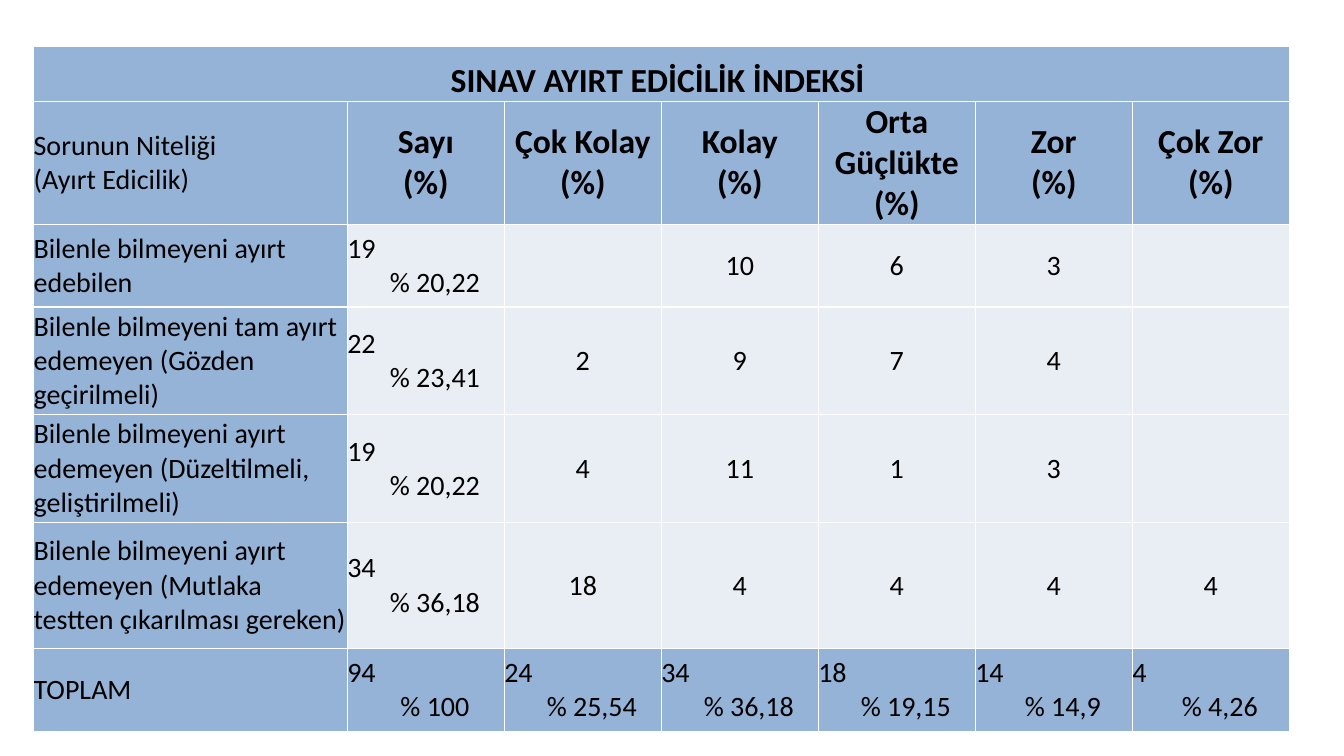
from lxml import etree
from pptx import Presentation
from pptx.dml.color import RGBColor
from pptx.enum.text import MSO_ANCHOR as Anchor, PP_ALIGN as Align
from pptx.oxml import parse_xml
from pptx.util import Pt

HEADER_BLUE, BODY_GREY, BLACK = "95B3D7", "E9EDF4", "000000"
COLUMN_WIDTHS = [224.1] + [112.15] * 6
ROW_HEIGHTS = [38.9, 88, 59, 77, 77, 90, 59]
BORDER = """<a:{side} xmlns:a="http://schemas.openxmlformats.org/drawingml/2006/main"
 w="12700"><a:solidFill><a:srgbClr val="FFFFFF"/></a:solidFill></a:{side}>"""

# A tuple holds a count and the percentage below it.
ROWS = [
    ["SINAV AYIRT EDİCİLİK İNDEKSİ "] + [""] * 6,
    ["Sorunun Niteliği \n(Ayırt Edicilik)", "Sayı\n(%)", "Çok Kolay\n(%)", "Kolay\n(%)",
     "Orta Güçlükte\n(%)", "Zor\n(%)", "Çok Zor\n(%)"],
    ["Bilenle bilmeyeni ayırt \nedebilen", ("19", "% 20,22"), "", "10", "6", "3", ""],
    ["Bilenle bilmeyeni tam ayırt edemeyen (Gözden geçirilmeli)",
     ("22", "% 23,41"), "2", "9", "7", "4", ""],
    ["Bilenle bilmeyeni ayırt edemeyen (Düzeltilmeli, geliştirilmeli)",
     ("19", "% 20,22"), "4", "11", "1", "3", ""],
    ["Bilenle bilmeyeni ayırt edemeyen (Mutlaka testten çıkarılması gereken)",
     ("34", "% 36,18"), "18", "4", "4", "4", "4"],
    ["TOPLAM", ("94", "% 100"), ("24", "% 25,54"), ("34", "% 36,18"),
     ("18", "% 19,15"), ("14", "% 14,9"), ("4", "% 4,26")],
]


def color(hex_string):
    return RGBColor.from_string(hex_string)


def write(paragraph, text, size=20, bold=False, align=Align.CENTER, indent=0):
    paragraph.text = text
    paragraph.alignment = align
    if indent:
        paragraph._p.get_or_add_pPr().set("marL", str(Pt(indent)))
    for run in paragraph.runs:
        run.font.name = "Calibri"
        run.font.size = Pt(size)
        run.font.bold = bold
        run.font.color.rgb = color(BLACK)


presentation = Presentation()
presentation.slide_width, presentation.slide_height = Pt(960), Pt(540)
slide = presentation.slides.add_slide(presentation.slide_layouts[6])

table = slide.shapes.add_table(
    len(ROWS), len(COLUMN_WIDTHS), Pt(24), Pt(33.4),
    Pt(sum(COLUMN_WIDTHS)), Pt(sum(ROW_HEIGHTS))).table
for column, width in zip(table.columns, COLUMN_WIDTHS):
    column.width = Pt(width)
for row, height in zip(table.rows, ROW_HEIGHTS):
    row.height = Pt(height)
table.cell(0, 0).merge(table.cell(0, len(COLUMN_WIDTHS) - 1))

last_row = len(ROWS) - 1
for row_index, row_values in enumerate(ROWS):
    for column_index, value in enumerate(row_values):
        cell = table.cell(row_index, column_index)
        is_header = row_index in (0, 1, last_row) or column_index == 0
        cell.fill.solid()
        cell.fill.fore_color.rgb = color(HEADER_BLUE if is_header else BODY_GREY)
        cell.margin_left = cell.margin_right = cell.margin_top = cell.margin_bottom = 0
        cell.vertical_anchor = Anchor.BOTTOM if row_index == 0 else Anchor.MIDDLE
        properties = cell._tc.get_or_add_tcPr()
        for position, side in enumerate(("lnL", "lnR", "lnT", "lnB")):
            properties.insert(position, parse_xml(BORDER.format(side=side)))

        first = cell.text_frame.paragraphs[0]
        if isinstance(value, tuple):
            count, percentage = value
            write(first, count, align=Align.LEFT)
            write(cell.text_frame.add_paragraph(), percentage, indent=13)
        elif row_index == 0 or (row_index == 1 and column_index > 0):
            write(first, value, size=24, bold=True)
        elif value:
            write(first, value, align=Align.LEFT if column_index == 0 else Align.CENTER)

presentation.save("out.pptx")
